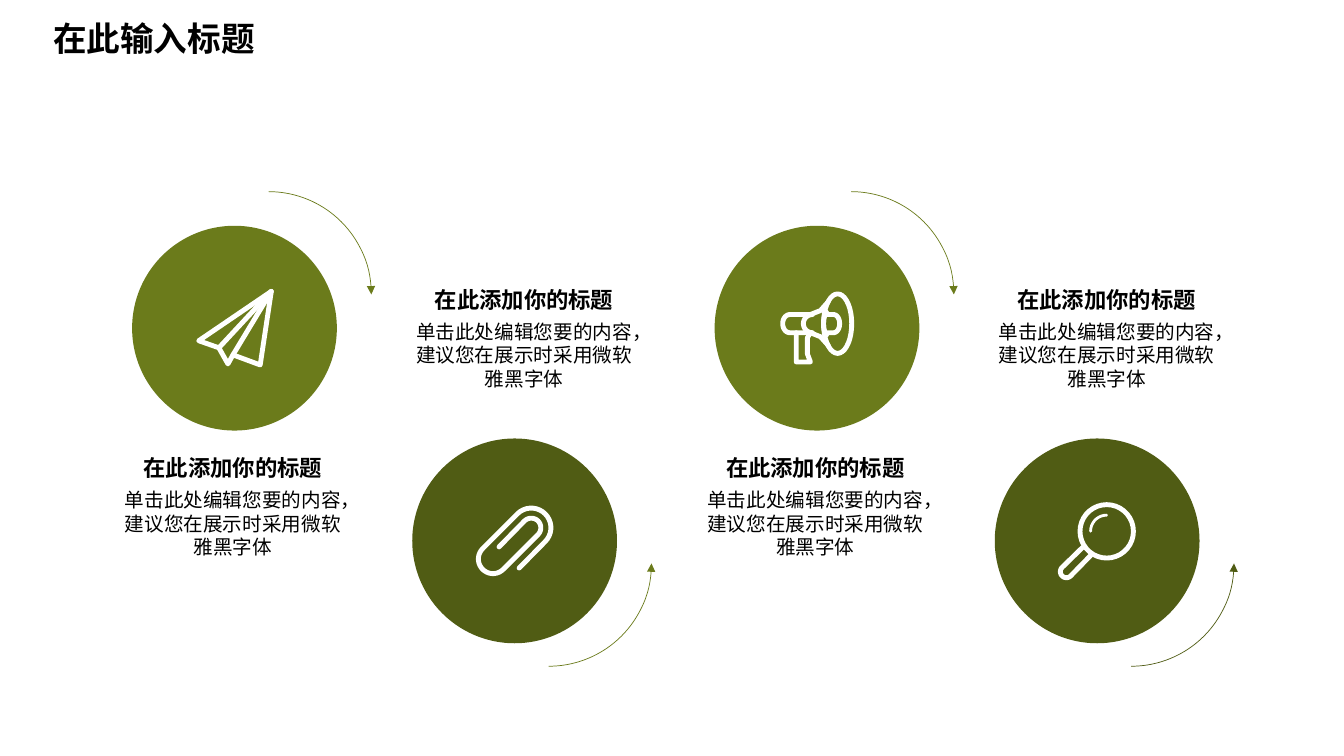
from math import cos, radians, sin

from lxml.etree import SubElement
from pptx import Presentation
from pptx.dml.color import RGBColor
from pptx.enum.shapes import MSO_SHAPE as Preset
from pptx.enum.text import MSO_AUTO_SIZE as AutoSize, PP_ALIGN as Align
from pptx.oxml.ns import qn
from pptx.util import Cm, Pt

HEADING = "在此输入标题"
STEP_TITLE = "在此添加你的标题"
STEP_BODY = "单击此处编辑您要的内容，建议您在展示时采用微软雅黑字体"

# Icon, circle colour, arc colour
STEPS = [
    ("plane", "light", "light"),
    ("clip", "dark", "light"),
    ("megaphone", "light", "light"),
    ("magnifier", "dark", "dark"),
]

THEME = {
    "font": "Noto Sans CJK SC",
    "text": RGBColor(0x00, 0x00, 0x00),
    "icon": RGBColor(0xFF, 0xFF, 0xFF),
    "light": RGBColor(0x6B, 0x7B, 0x1B),
    "dark": RGBColor(0x50, 0x5C, 0x14),
    "heading_size": Pt(24),
    "title_size": Pt(16),
    "body_size": Pt(14),
    "arc_width": Pt(0.5),
    "icon_width": Pt(3.5),
    "glint_width": Pt(2),
}

UNIT = Cm(0.0254)
FINE = 100
CIRCLE, ARC = Cm(5.16), Cm(5.18)
FIRST_LEFT, PAIR_GAP, LOWER_SHIFT = Cm(3.33), Cm(14.68), Cm(7.06)
# Per row: circle top, arc drop, title top, title shift
UPPER_ROW = (Cm(5.69), Cm(-0.86), Cm(11.33), Cm(0))
LOWER_ROW = (Cm(11.05), Cm(0.56), Cm(7.09), Cm(0.28))


def curve(x, y, radius, start, turn, height=None):
    """Return points along an ellipse arc; angles run clockwise from the right."""
    steps = abs(turn) // 10
    angles = [radians(start + turn * step / steps) for step in range(steps + 1)]
    return [(x + radius * cos(a), y + (height or radius) * sin(a)) for a in angles]


def plane_strokes():
    outline = [(75, 2), (3, 51), (23, 58), (32, 74), (37, 65), (64, 75)]
    tip = outline[0]
    return [outline + [tip], [tip, outline[2]], [tip, outline[4]]]


def clip_strokes():
    return [[(43, 62)] + curve(55, 22, 19.5, 45, -180)
            + curve(17, 53, 14.5, 225, -180)
            + curve(55, 22, 9.5, 45, -180) + [(23, 41)]]


def megaphone_strokes():
    horn = [(48, 10), (40, 19), (30, 23)]
    mirrored = [(x, 64 - y) for x, y in reversed(horn)]
    return [
        curve(57, 32, 14, 0, 360, 29.5),
        horn + curve(9.5, 32, 7, 270, -180, 9) + mirrored,
        curve(32, 32, 9, 270, -180),
        curve(49, 32, 6, 240, -120, 13),
        [(44, 23)] + curve(53, 32, 6, 270, 180, 9) + [(44, 41)],
        [(16, 41), (16, 70), (30, 70), (27, 62), (27, 46), (30, 41)],
    ]


def magnifier_strokes():
    handle = [(24, 45)] + curve(8, 69, 6, 225, -180) + [(32, 53)]
    return [curve(48, 29, 26.5, 0, 360), handle]


def glint_strokes():
    return [curve(48, 29, 16, 180, 90)]


# Drawing rule, width and height in hundredths of an inch
ICONS = {
    "plane": (plane_strokes, 77, 77),
    "clip": (clip_strokes, 77, 70),
    "megaphone": (megaphone_strokes, 73, 73),
    "magnifier": (magnifier_strokes, 77, 77),
}


def add_strokes(slide, strokes, left, top, width):
    outlines = [[(x * FINE, y * FINE) for x, y in stroke] for stroke in strokes]
    builder = slide.shapes.build_freeform(*outlines[0][0], scale=UNIT / FINE)
    for index, points in enumerate(outlines):
        if index:
            builder.move_to(*points[0])
        builder.add_line_segments(points[1:], close=False)
    shape = builder.convert_to_shape(left, top)
    shape.shadow.inherit = False
    shape.fill.background()
    shape.line.color.rgb = THEME["icon"]
    shape.line.width = width
    line = shape.element.spPr.find(qn("a:ln"))
    line.set("cap", "rnd")
    SubElement(line, qn("a:round"))


def add_circle(slide, left, top, color):
    circle = slide.shapes.add_shape(Preset.OVAL, left, top, CIRCLE, CIRCLE)
    circle.shadow.inherit = False
    circle.fill.solid()
    circle.fill.fore_color.rgb = color
    circle.line.fill.background()


def add_arc(slide, left, top, color, flipped):
    arc = slide.shapes.add_shape(Preset.ARC, left, top, ARC, ARC)
    arc.shadow.inherit = False
    arc.fill.background()
    arc.line.color.rgb = color
    arc.line.width = THEME["arc_width"]
    properties = arc.element.spPr
    SubElement(properties.find(qn("a:ln")), qn("a:tailEnd"), type="triangle")
    if flipped:
        properties.find(qn("a:xfrm")).set("flipV", "1")


def add_text(slide, text, box, size, bold=False, align=Align.CENTER):
    text_frame = slide.shapes.add_textbox(*box).text_frame
    text_frame.word_wrap = True
    text_frame.auto_size = AutoSize.SHAPE_TO_FIT_TEXT
    text_frame.text = text
    paragraph = text_frame.paragraphs[0]
    paragraph.alignment = align
    font = paragraph.runs[0].font
    font.name, font.size, font.bold = THEME["font"], size, bold
    font.color.rgb = THEME["text"]
    return paragraph


def add_step(slide, index, icon, circle_color, arc_color):
    pair, lower = divmod(index, 2)
    top, arc_drop, title_top, title_shift = LOWER_ROW if lower else UPPER_ROW
    left = FIRST_LEFT + pair * PAIR_GAP + lower * LOWER_SHIFT
    add_circle(slide, left, top, THEME[circle_color])
    add_arc(slide, left + Cm(0.85), top + arc_drop, THEME[arc_color], lower)

    title_left = left + title_shift
    body_box = (title_left - Cm(0.56), title_top + Cm(0.84), Cm(6.2), Cm(2.06))
    body = add_text(slide, STEP_BODY, body_box, THEME["body_size"])
    body._p.get_or_add_pPr().set("indent", str(Cm(-1.7)))
    add_text(slide, STEP_TITLE, (title_left, title_top, Cm(5.08), Cm(0.94)),
             THEME["title_size"], bold=True)

    strokes, width, height = ICONS[icon]
    icon_left = left + (CIRCLE - width * UNIT) // 2
    icon_top = top + (CIRCLE - height * UNIT) // 2
    add_strokes(slide, strokes(), icon_left, icon_top, THEME["icon_width"])
    if icon == "magnifier":
        add_strokes(slide, glint_strokes(), icon_left, icon_top, THEME["glint_width"])


def main():
    presentation = Presentation()
    presentation.slide_width, presentation.slide_height = Cm(33.87), Cm(19.05)
    slide = presentation.slides.add_slide(presentation.slide_layouts[6])
    for index, step in enumerate(STEPS):
        add_step(slide, index, *step)
    add_text(slide, HEADING, (Cm(1.09), Cm(0.33), Cm(6.63), Cm(1.27)),
             THEME["heading_size"], bold=True, align=Align.LEFT)
    presentation.save("out.pptx")


if __name__ == "__main__":
    main()
